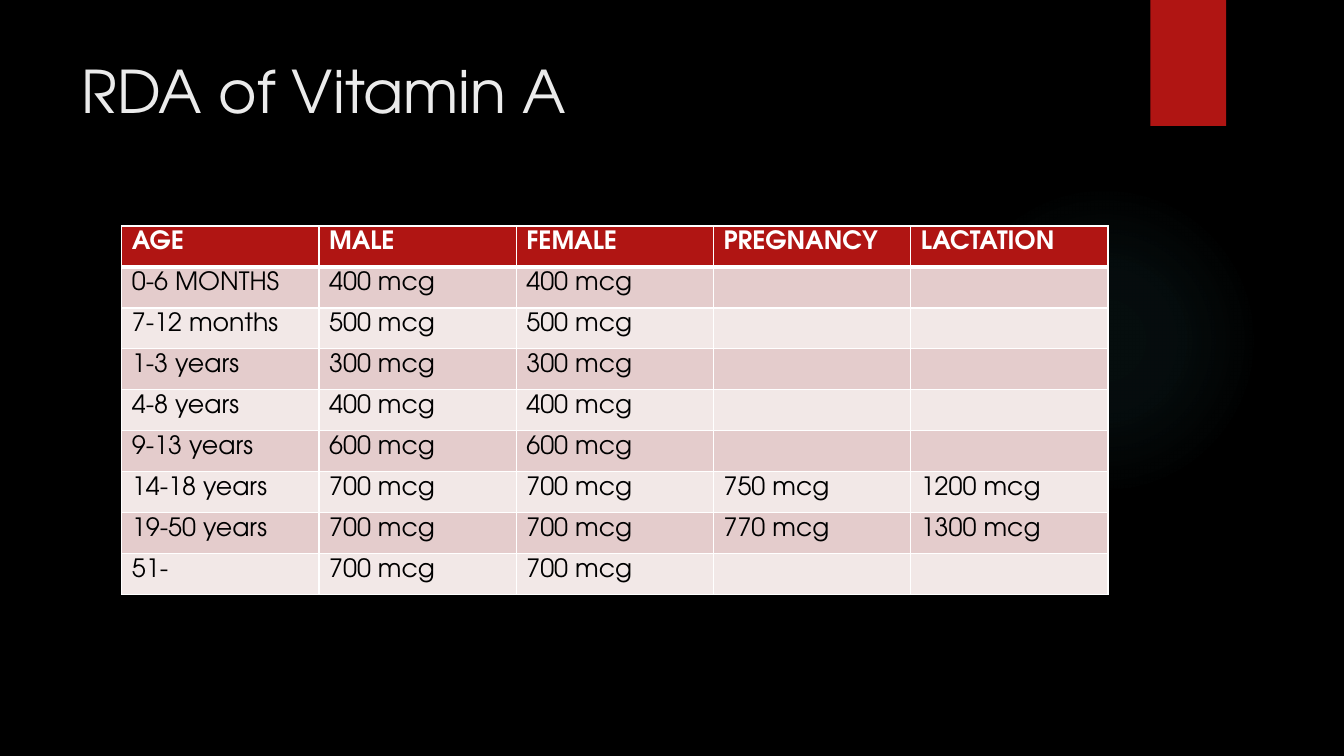
from lxml import etree
from pptx import Presentation
from pptx.dml.color import RGBColor
from pptx.enum import shapes, text
from pptx.oxml import ns
from pptx.util import Pt

FONT = "TeX Gyre Adventor"
BLACK = RGBColor(0x00, 0x00, 0x00)
WHITE = RGBColor(0xFF, 0xFF, 0xFF)
OFF_WHITE = RGBColor(0xEB, 0xEB, 0xEB)
RED = RGBColor(0xB0, 0x15, 0x13)
DARK_BAND = RGBColor(0xE4, 0xCC, 0xCC)
LIGHT_BAND = RGBColor(0xF2, 0xE8, 0xE7)
TEAL = RGBColor(0x50, 0xB9, 0xC1)

HEADER = ["AGE", "MALE", "FEMALE", "PREGNANCY", "LACTATION"]
INTAKES = [
    ["0-6 MONTHS", "400 mcg", "400 mcg"],
    ["7-12 months", "500 mcg", "500 mcg"],
    ["1-3 years", "300 mcg", "300 mcg"],
    ["4-8 years", "400 mcg", "400 mcg"],
    ["9-13 years", "600 mcg", "600 mcg"],
    ["14-18 years", "700 mcg", "700 mcg", "750 mcg", "1200 mcg"],
    ["19-50 years", "700 mcg", "700 mcg", "770 mcg", "1300 mcg"],
    ["51-", "700 mcg", "700 mcg"],
]
COL_WIDTH, ROW_HEIGHT = Pt(140.9), Pt(29.25)


def set_all(obj, values):
    for name, value in values.items():
        setattr(obj, name, value)


def format_font(font, size, color, bold=False):
    set_all(font, {"name": FONT, "size": Pt(size), "bold": bold})
    font.color.rgb = color


def add_plain_shape(slide, kind, left, top, width, height, color):
    sp = slide.shapes.add_shape(kind, Pt(left), Pt(top), Pt(width), Pt(height))
    sp.shadow.inherit = False
    sp.fill.solid()
    sp.fill.fore_color.rgb = color
    sp.line.fill.background()
    return sp


def fade_out(sp, color, stops):
    """Fill a shape with one colour from its centre; stops are (position %, alpha %)."""
    grad = etree.Element(ns.qn("a:gradFill"), rotWithShape="1")
    gs_list = etree.SubElement(grad, ns.qn("a:gsLst"))
    for pos, alpha in stops:
        gs = etree.SubElement(gs_list, ns.qn("a:gs"), pos=str(pos * 1000))
        clr = etree.SubElement(gs, ns.qn("a:srgbClr"), val=str(color))
        etree.SubElement(clr, ns.qn("a:alpha"), val=str(alpha * 1000))
    circle = etree.SubElement(grad, ns.qn("a:path"), path="circle")
    etree.SubElement(circle, ns.qn("a:fillToRect"),
                     dict.fromkeys("ltrb", "50000"))
    solid = sp._element.spPr.find(ns.qn("a:solidFill"))
    solid.getparent().replace(solid, grad)


def set_borders(cell, widths):
    """Draw white borders; widths maps L, R, T and B to points."""
    tc_pr = cell._tc.get_or_add_tcPr()
    for i, (side, width) in enumerate(widths.items()):
        ln = etree.Element(ns.qn(f"a:ln{side}"), w=str(Pt(width)))
        fill = etree.SubElement(ln, ns.qn("a:solidFill"))
        etree.SubElement(fill, ns.qn("a:srgbClr"), val=str(WHITE))
        tc_pr.insert(i, ln)


def format_cell(cell, label, row):
    is_header = row == 0
    cell.fill.solid()
    cell.fill.fore_color.rgb = (
        RED if is_header else DARK_BAND if row % 2 else LIGHT_BAND)
    set_all(cell, {"margin_top": Pt(3.6), "margin_bottom": Pt(3.6),
                   "vertical_anchor": text.MSO_ANCHOR.TOP})
    set_borders(cell, {"L": 1, "R": 1, "T": 3 if row == 1 else 1,
                       "B": 3 if is_header else 1})
    p = cell.text_frame.paragraphs[0]
    p.text = label
    format_font(p.font, 18, WHITE if is_header else BLACK, is_header)


def add_intake_table(slide, left, top):
    rows = [HEADER] + INTAKES
    n_cols = len(HEADER)
    table = slide.shapes.add_table(
        len(rows), n_cols, Pt(left), Pt(top),
        COL_WIDTH * n_cols, ROW_HEIGHT * len(rows)).table
    for col in table.columns:
        col.width = COL_WIDTH
    for i, labels in enumerate(rows):
        table.rows[i].height = ROW_HEIGHT
        for j in range(n_cols):
            format_cell(table.cell(i, j), labels[j] if j < len(labels) else "", i)


def format_title(title, label):
    set_all(title, {"left": Pt(51), "top": Pt(35.5),
                    "width": Pt(741), "height": Pt(110)})
    tf = title.text_frame
    set_all(tf, {"text": label, "word_wrap": True,
                 "auto_size": text.MSO_AUTO_SIZE.NONE,
                 "vertical_anchor": text.MSO_ANCHOR.TOP})
    p = tf.paragraphs[0]
    p.alignment = text.PP_ALIGN.LEFT
    format_font(p.font, 42, OFF_WHITE)


def main():
    prs = Presentation()
    set_all(prs, {"slide_width": Pt(960), "slide_height": Pt(540)})
    slide = prs.slides.add_slide(prs.slide_layouts[5])
    slide.background.fill.solid()
    slide.background.fill.fore_color.rgb = BLACK

    glow = add_plain_shape(slide, shapes.MSO_SHAPE.OVAL, 677.5, 132, 222, 222, TEAL)
    fade_out(glow, TEAL, [(0, 7), (36, 6), (69, 0)])
    add_plain_shape(slide, shapes.MSO_SHAPE.RECTANGLE, 821.75, 0, 54, 90, RED)
    format_title(slide.shapes.title, "RDA of Vitamin A")
    add_intake_table(slide, 87, 161.5)
    prs.save("out.pptx")


if __name__ == "__main__":
    main()
